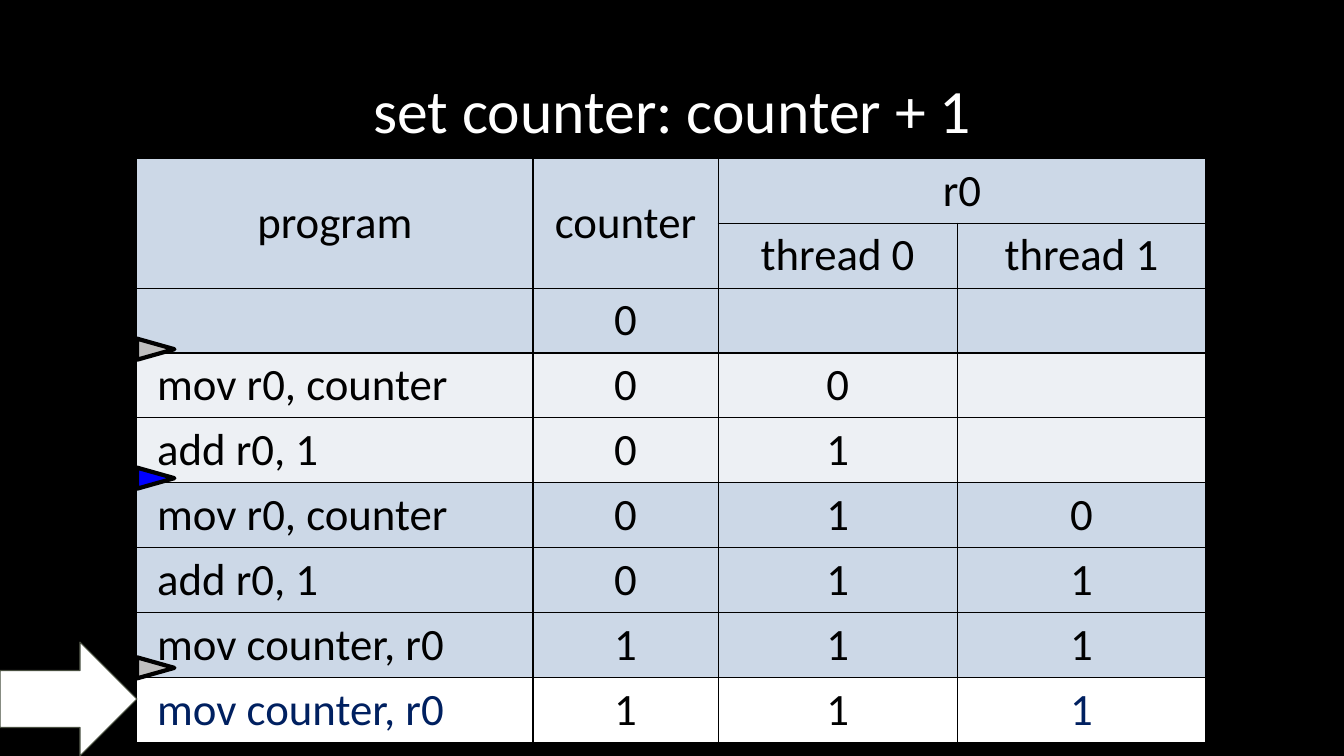
import pptx
import pptx.util
import pptx.dml.color
import pptx.enum.shapes
import pptx.enum.text
import pptx.oxml
import pptx.oxml.ns

Cm = pptx.util.Cm
Pt = pptx.util.Pt
RGBColor = pptx.dml.color.RGBColor
MSO_SHAPE = pptx.enum.shapes.MSO_SHAPE
PP_ALIGN = pptx.enum.text.PP_ALIGN
MIDDLE = pptx.enum.text.MSO_ANCHOR.MIDDLE

BLACK = RGBColor(0x00, 0x00, 0x00)
WHITE = RGBColor(0xFF, 0xFF, 0xFF)
NAVY = RGBColor(0x00, 0x20, 0x60)
BLUE = RGBColor(0x00, 0x00, 0xFF)
GRAY = RGBColor(0xBF, 0xBF, 0xBF)
OLIVE = RGBColor(0x48, 0x4F, 0x40)
BLUE_ROW = RGBColor(0xCC, 0xD8, 0xE7)
PALE_ROW = RGBColor(0xED, 0xF0, 0xF4)
FONT = "Calibri"


def add_marker(kind, left, top, width, height, fill, line, line_width):
    shape = slide.shapes.add_shape(kind, Cm(left), Cm(top), Cm(width), Cm(height))
    shape.shadow.inherit = False
    shape.fill.solid()
    shape.fill.fore_color.rgb = fill
    shape.line.color.rgb = line
    shape.line.width = Pt(line_width)
    return shape


def add_borders(cell):
    properties = cell._tc.get_or_add_tcPr()
    for index, side in enumerate(("lnL", "lnR", "lnT", "lnB")):
        border = pptx.oxml.parse_xml(
            f'<a:{side} {pptx.oxml.ns.nsdecls("a")} w="12700">'
            f'<a:solidFill><a:srgbClr val="{BLACK}"/></a:solidFill></a:{side}>')
        properties.insert(index, border)


presentation = pptx.Presentation()
presentation.slide_width = Cm(33.87)
presentation.slide_height = Cm(19.05)
slide = presentation.slides.add_slide(presentation.slide_layouts[5])
slide.background.fill.solid()
slide.background.fill.fore_color.rgb = BLACK

# Title
title = slide.shapes.title
title.left, title.top, title.width, title.height = Cm(2.34), Cm(1.02), Cm(29.21), Cm(3.68)
title.text_frame.text = "set counter: counter + 1"
title.text_frame.vertical_anchor = MIDDLE
paragraph = title.text_frame.paragraphs[0]
paragraph.alignment = PP_ALIGN.CENTER
paragraph.line_spacing = 0.9
paragraph.font.name = FONT
paragraph.font.size = Pt(44)
paragraph.font.color.rgb = WHITE

# Execution trace: row fill, then program, counter, r0 of each thread
trace_rows = [
    (BLUE_ROW, "program", "counter", "r0", ""),
    (BLUE_ROW, "", "", "thread 0", "thread 1"),
    (BLUE_ROW, "", "0", "", ""),
    (PALE_ROW, "mov r0, counter", "0", "0", ""),
    (PALE_ROW, "add r0, 1", "0", "1", ""),
    (BLUE_ROW, "mov r0, counter", "0", "1", "0"),
    (BLUE_ROW, "add r0, 1", "0", "1", "1"),
    (BLUE_ROW, "mov counter, r0", "1", "1", "1"),
    (WHITE, "mov counter, r0", "1", "1", "1"),
]
column_widths = [9.98, 4.67, 6.02, 6.27]
row_height = 1.63
header_rows = 2
last_row = len(trace_rows) - 1

table = slide.shapes.add_table(
    len(trace_rows), len(column_widths), Cm(3.45), Cm(3.99),
    Cm(sum(column_widths)), Cm(row_height * len(trace_rows))).table
for column, width in zip(table.columns, column_widths):
    column.width = Cm(width)

for row, (fill, *texts) in enumerate(trace_rows):
    table.rows[row].height = Cm(row_height)
    for column, text in enumerate(texts):
        cell = table.cell(row, column)
        cell.fill.solid()
        cell.fill.fore_color.rgb = fill
        add_borders(cell)
        cell.text = text
        paragraph = cell.text_frame.paragraphs[0]
        paragraph.font.name = FONT
        paragraph.font.size = Pt(32)
        paragraph.font.bold = False
        thread_1_step = row == last_row and column in (0, 3)
        paragraph.font.color.rgb = NAVY if thread_1_step else BLACK
        if column == 0 and row >= header_rows:
            paragraph.alignment = PP_ALIGN.LEFT
            cell.margin_left = Cm(0.51)
        else:
            paragraph.alignment = PP_ALIGN.CENTER

# Header spans
for column in (0, 1):
    table.cell(0, column).merge(table.cell(1, column))
    table.cell(0, column).vertical_anchor = MIDDLE
table.cell(0, 2).merge(table.cell(0, 3))

# Thread switch markers
for top, color in ((11.58, BLUE), (8.33, GRAY), (16.36, GRAY)):
    triangle = add_marker(MSO_SHAPE.ISOSCELES_TRIANGLE, 3.66, top, 0.53, 0.94, color, BLACK, 3)
    triangle.rotation = 90

# Current step arrow
add_marker(MSO_SHAPE.RIGHT_ARROW, 0, 16.18, 3.45, 2.87, WHITE, OLIVE, 0.85)

presentation.save("out.pptx")
